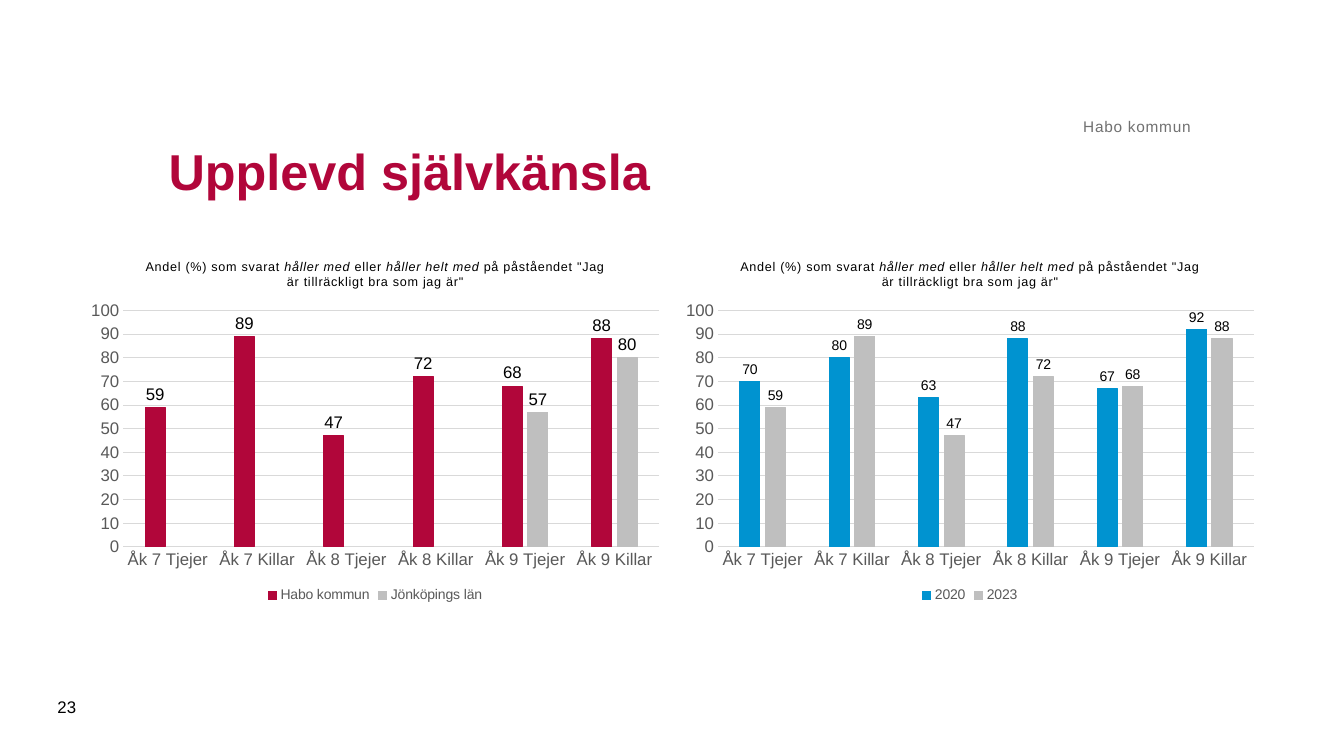
import pptx
import pptx.util
import pptx.chart.data
import pptx.dml.color
import pptx.enum.chart
import pptx.enum.text

Cm = pptx.util.Cm
Pt = pptx.util.Pt
RGBColor = pptx.dml.color.RGBColor
ANCHOR = pptx.enum.text.MSO_ANCHOR
ALIGN = pptx.enum.text.PP_ALIGN
CHART = pptx.enum.chart

RED = RGBColor(0xB1, 0x06, 0x3A)
BLUE = RGBColor(0x00, 0x93, 0xD0)
SILVER = RGBColor(0xBF, 0xBF, 0xBF)
RULE = RGBColor(0xD9, 0xD9, 0xD9)
GREY = RGBColor(0x59, 0x59, 0x59)
MUTED = RGBColor(0x71, 0x71, 0x71)
BLACK = RGBColor(0x00, 0x00, 0x00)

FONT = "Arial"
WHOLE = "#,##0;#,##0"
GROUPS = [f"Åk {grade} {sex}" for grade in (7, 8, 9) for sex in ("Tjejer", "Killar")]
# Question above each chart: text, italic
QUERY = [
    ("Andel (%) som svarat ", False),
    ("håller med", True),
    (" eller ", False),
    ("håller helt med", True),
    (' på påståendet "Jag är tillräckligt bra som jag är"', False),
]


def style(font, size, color, bold=False, italic=False):
    font.name = FONT
    font.size = Pt(size)
    font.color.rgb = color
    font.bold = bold
    font.italic = italic


def add_run(para, text, size, color, bold=False, italic=False, space=0):
    run = para.add_run()
    run.text = text
    style(run.font, size, color, bold, italic)
    if space:
        run._r.get_or_add_rPr().set("spc", str(space))


def add_text(slide, box, text, size, color, bold=False, space=0,
             anchor=ANCHOR.MIDDLE, align=ALIGN.LEFT, inset=True):
    frame = slide.shapes.add_textbox(*map(Cm, box)).text_frame
    frame.word_wrap = True
    frame.vertical_anchor = anchor
    if not inset:
        frame.margin_left = frame.margin_right = 0
        frame.margin_top = frame.margin_bottom = 0
    para = frame.paragraphs[0]
    para.alignment = align
    add_run(para, text, size, color, bold, space=space)


def add_bars(slide, box, rows, size):
    """Place a column chart; rows hold name, values and colour."""
    data = pptx.chart.data.CategoryChartData(number_format="0")
    data.categories = GROUPS
    for name, values, _ in rows:
        data.add_series(name, values)
    chart = slide.shapes.add_chart(
        CHART.XL_CHART_TYPE.COLUMN_CLUSTERED, *map(Cm, box), data).chart
    style(chart.font, 10, BLACK)

    # Heading
    chart.has_title = True
    chart.chart_title.include_in_layout = False
    para = chart.chart_title.text_frame.paragraphs[0]
    for text, italic in QUERY:
        add_run(para, text, 9, BLACK, italic=italic, space=50)

    # Legend
    chart.has_legend = True
    chart.legend.position = CHART.XL_LEGEND_POSITION.BOTTOM
    chart.legend.include_in_layout = False
    style(chart.legend.font, 10, GREY)

    # Axes
    for axis in (chart.category_axis, chart.value_axis):
        axis.major_tick_mark = axis.minor_tick_mark = CHART.XL_TICK_MARK.NONE
        style(axis.tick_labels.font, 12, GREY)
    base, scale = chart.category_axis, chart.value_axis
    base.format.line.color.rgb = RULE
    base.format.line.width = Pt(0.75)
    scale.format.line.fill.background()
    scale.minimum_scale, scale.maximum_scale, scale.major_unit = 0, 100, 10
    scale.tick_labels.number_format = WHOLE
    scale.tick_labels.number_format_is_linked = False
    scale.major_gridlines.format.line.color.rgb = RULE
    scale.major_gridlines.format.line.width = Pt(0.75)

    # Columns
    plot = chart.plots[0]
    plot.vary_by_categories = False
    plot.gap_width, plot.overlap = 219, -27
    for bars, (_, _, color) in zip(plot.series, rows):
        bars.invert_if_negative = False
        bars.format.fill.solid()
        bars.format.fill.fore_color.rgb = color
        bars.format.line.color.rgb = color
        bars.format.line.width = Pt(0.75)
        labels = bars.data_labels
        labels.show_value = True
        labels.position = CHART.XL_LABEL_POSITION.OUTSIDE_END
        labels.number_format = WHOLE
        labels.number_format_is_linked = False
        style(labels.font, size, BLACK)


def add_pair(slide, left, top, width, height):
    step = width + 0.08
    latest = [59, 89, 47, 72, 68, 88]
    county = [None] * 4 + [57, 80]
    earlier = [70, 80, 63, 88, 67, 92]
    add_bars(slide, (left, top, width, height),
             [("Habo kommun", latest, RED), ("Jönköpings län", county, SILVER)], 12)
    add_bars(slide, (left + step, top, width, height),
             [("2020", earlier, BLUE), ("2023", latest, SILVER)], 10)


def add_head(slide, left, top, width):
    add_text(slide, (left, top + 0.91, width, 3.61), "Upplevd självkänsla",
             36, RED, bold=True)
    add_text(slide, (left, top, width, 1.85), "Habo kommun", 11, MUTED, space=50,
             anchor=ANCHOR.BOTTOM, align=ALIGN.RIGHT, inset=False)


def main():
    deck = pptx.Presentation()
    deck.slide_width, deck.slide_height = Cm(33.87), Cm(19.05)
    slide = deck.slides.add_slide(deck.slide_layouts[6])
    add_pair(slide, 2, 6.1, 14.91, 9.2)
    add_head(slide, 4, 1.58, 26.01)
    # Page number
    add_text(slide, (1.2, 17.3, 1.45, 1.02), "23", 12, BLACK)
    deck.save("out.pptx")


if __name__ == "__main__":
    main()
